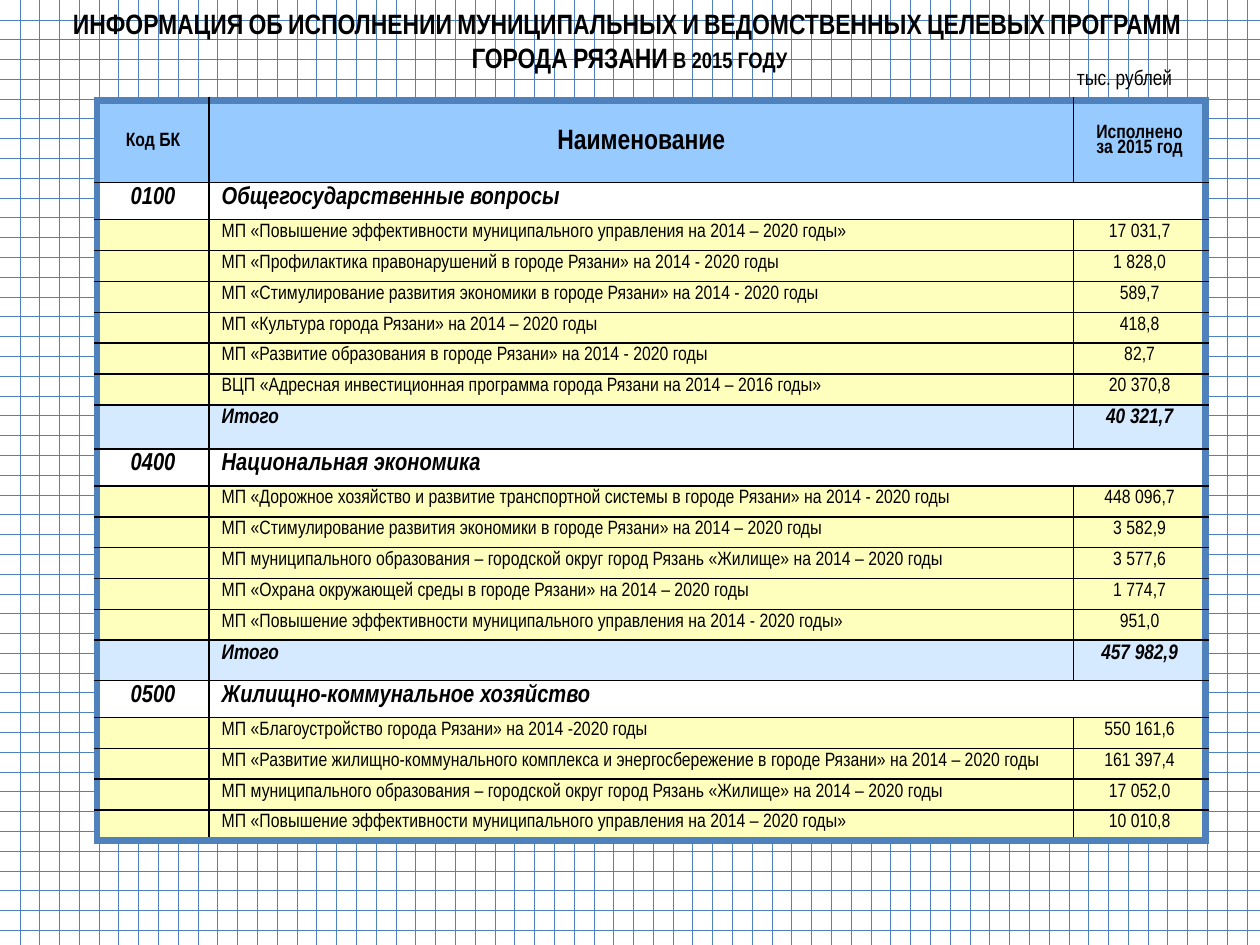
from lxml import etree
from pptx import Presentation
from pptx.dml.color import RGBColor
from pptx.enum.dml import MSO_PATTERN
from pptx.enum.text import MSO_ANCHOR, PP_ALIGN
from pptx.oxml.ns import qn
from pptx.util import Inches, Pt

CENTER, LEFT = PP_ALIGN.CENTER, PP_ALIGN.LEFT
MIDDLE, TOP = MSO_ANCHOR.MIDDLE, MSO_ANCHOR.TOP
DOTTED_GRID = MSO_PATTERN.DOTTED_GRID

HEADER = ("Код БК", "Наименование", "Исполнено\nза 2015 год")
SECTIONS = [
    ("0100", "Общегосударственные вопросы", [
        ("МП «Повышение эффективности муниципального управления на 2014 – 2020 годы»", "17 031,7"),
        ("МП «Профилактика правонарушений в городе Рязани» на 2014 - 2020 годы", "1 828,0"),
        ("МП «Стимулирование развития экономики в городе Рязани» на 2014 - 2020 годы", "589,7"),
        ("МП «Культура города Рязани» на 2014 – 2020 годы", "418,8"),
        ("МП «Развитие образования в городе Рязани» на 2014 - 2020 годы", "82,7"),
        ("ВЦП «Адресная инвестиционная программа города Рязани на 2014 – 2016 годы»", "20 370,8"),
    ], "40 321,7", 0.35),
    ("0400", "Национальная экономика", [
        ("МП «Дорожное хозяйство и развитие транспортной системы в городе Рязани» на 2014 - 2020 годы", "448 096,7"),
        ("МП «Стимулирование развития экономики в городе Рязани» на 2014 – 2020 годы", "3 582,9"),
        ("МП муниципального образования – городской округ город Рязань «Жилище» на 2014 – 2020 годы", "3 577,6"),
        ("МП «Охрана окружающей среды в городе Рязани» на 2014 – 2020 годы", "1 774,7"),
        ("МП «Повышение эффективности муниципального управления на 2014 - 2020 годы»", "951,0"),
    ], "457 982,9", 0.32),
    ("0500", "Жилищно-коммунальное хозяйство", [
        ("МП «Благоустройство города Рязани» на 2014 -2020 годы", "550 161,6"),
        ("МП «Развитие жилищно-коммунального комплекса и энергосбережение в городе Рязани» на 2014 – 2020 годы", "161 397,4"),
        ("МП муниципального образования – городской округ город Рязань «Жилище» на 2014 – 2020 годы", "17 052,0"),
        ("МП «Повышение эффективности муниципального управления на 2014 – 2020 годы»", "10 010,8"),
    ], None, 0),
]
COLUMN_WIDTHS = (0.89, 6.86, 1.05)
ROW_STYLES = {
    "header": {"fill": "97CBFF", "sizes": (11, 16, 11), "bold": True, "italic": False},
    "section": {"fill": "FFFFFF", "sizes": (14, 14, 14), "bold": True, "italic": True},
    "item": {"fill": "FFFFBD", "sizes": (11, 11, 11), "bold": False, "italic": False},
    "total": {"fill": "D5EAFF", "sizes": (12, 12, 12), "bold": True, "italic": True},
}


def color(value):
    return RGBColor.from_string(value)


def write_text(frame, text, size=11, bold=False, italic=False, align=LEFT,
               anchor=TOP, small_caps=False, spacing=None):
    frame.word_wrap = True
    frame.vertical_anchor = anchor
    for index, line in enumerate(text.split("\n")):
        paragraph = frame.add_paragraph() if index else frame.paragraphs[0]
        paragraph.text = line
        paragraph.alignment = align
        if spacing:
            paragraph.line_spacing = spacing
        if not line:
            ending = etree.SubElement(paragraph._p, qn("a:endParaRPr"))
            ending.set("sz", str(size * 100))
        for run in paragraph.runs:
            run.font.name = Style.font
            run.font.size = Pt(size)
            run.font.bold = bold
            run.font.italic = italic
            run.font.color.rgb = color(Style.ink)
            if small_caps:
                run.font._element.set("cap", "small")


def draw_border(cell, side, line_color, width):
    line = etree.SubElement(cell._tc.get_or_add_tcPr(), qn(f"a:ln{side}"), w=str(Pt(width)))
    fill = etree.SubElement(line, qn("a:solidFill"))
    etree.SubElement(fill, qn("a:srgbClr"), val=line_color)


class Style:
    font = "Arial Narrow"
    ink = "000000"
    accent = "4F81BD"

    def __init__(self, slide):
        self.slide = slide

    def background(self):
        fill = self.slide.background.fill
        fill.patterned()
        fill.pattern = DOTTED_GRID
        fill.fore_color.rgb = color(self.accent)
        fill.back_color.rgb = color("FFFFFF")

    def text(self, left, top, width, height, text, **text_format):
        shape = self.slide.shapes.add_textbox(
            Inches(left), Inches(top), Inches(width), Inches(height))
        write_text(shape.text_frame, text, **text_format)

    def table(self, left, top, widths, rows):
        heights = [height for _, height, _ in rows]
        table = self.slide.shapes.add_table(
            len(rows), len(widths), Inches(left), Inches(top),
            Inches(sum(widths)), Inches(sum(heights))).table
        table.first_row = False
        table.horz_banding = False
        for column, width in zip(table.columns, widths):
            column.width = Inches(width)
        for index, (kind, height, texts) in enumerate(rows):
            table.rows[index].height = Inches(height)
            for column, text in enumerate(texts):
                self.cell(table, index, column, text, kind)
            if kind == "section":
                table.cell(index, 1).merge(table.cell(index, 2))

    def cell(self, table, row, column, text, kind):
        cell = table.cell(row, column)
        style = ROW_STYLES[kind]
        header = kind == "header"
        cell.margin_top = cell.margin_bottom = Inches(0.03)
        write_text(cell.text_frame, text, size=style["sizes"][column],
                   bold=style["bold"], italic=style["italic"],
                   align=LEFT if column == 1 and not header else CENTER,
                   spacing=0.82 if "\n" in text else None)
        cell.vertical_anchor = MIDDLE if header else TOP
        outer = {"L": column == 0, "R": column == 2 or (kind == "section" and column == 1),
                 "T": row == 0, "B": row == len(table.rows) - 1}
        for side, is_outer in outer.items():
            draw_border(cell, side, *((self.accent, 4.5) if is_outer else (self.ink, 1)))
        cell.fill.solid()
        cell.fill.fore_color.rgb = color(style["fill"])


def budget_rows():
    rows = [("header", 0.65, HEADER)]
    for code, name, items, total, total_height in SECTIONS:
        rows.append(("section", 0.28, (code, name, "")))
        rows += [("item", 0.245, ("", *item)) for item in items]
        if total:
            rows.append(("total", total_height, ("", "Итого", total)))
    return rows


def main():
    presentation = Presentation()
    presentation.slide_width = Inches(10)
    presentation.slide_height = Inches(7.5)
    page = Style(presentation.slides.add_slide(presentation.slide_layouts[6]))
    page.background()
    page.text(0, 0, 9.99, 0.64,
              "ИНФОРМАЦИЯ ОБ ИСПОЛНЕНИИ МУНИЦИПАЛЬНЫХ И ВЕДОМСТВЕННЫХ ЦЕЛЕВЫХ ПРОГРАММ "
              "\vГОРОДА РЯЗАНИ в 2015 году",
              size=16, bold=True, align=CENTER, anchor=MIDDLE, small_caps=True)
    page.table(0.77, 0.8, COLUMN_WIDTHS, budget_rows())
    page.text(8.15, 0.44, 1.55, 0.35, "тыс. рублей", size=12, align=CENTER, anchor=MIDDLE)
    presentation.save("out.pptx")


if __name__ == "__main__":
    main()
